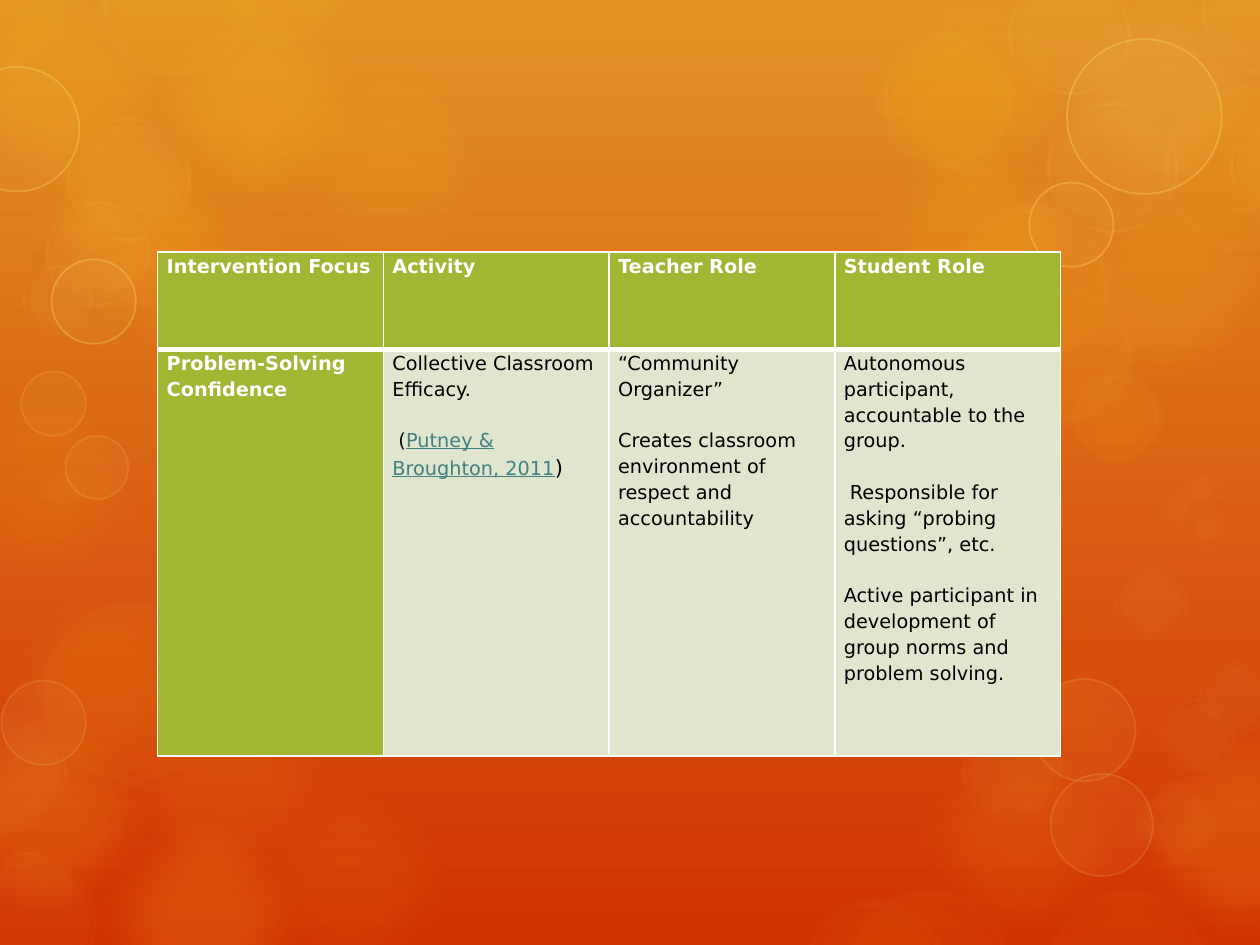
import pptx
import pptx.dml.color
import pptx.enum.shapes
import pptx.oxml.ns
import pptx.util
from dataclasses import dataclass
from lxml import etree
from pptx.util import Cm, Pt


@dataclass(frozen=True)
class Theme:
    font: str = "DejaVu Sans"
    body_size: float = 11
    bracket_size: float = 12
    paragraph_gap: float = 14.8
    line_spacing: float = 1.15
    sky_top: str = "E39325"
    sky_bottom: str = "D13202"
    gold: str = "FDC61B"
    pale_gold: str = "FFE281"
    cream: str = "FEEBAE"
    green: str = "A1B633"
    pale_green: str = "E0E5CE"
    white: str = "FFFFFF"
    black: str = "000000"
    citation: str = "408080"


theme = Theme()
rgb = pptx.dml.color.RGBColor.from_string
qn = pptx.oxml.ns.qn


def paint(fill, color, opacity):
    fill.solid()
    fill.fore_color.rgb = rgb(color)
    srgb = fill._xPr.find(".//" + qn("a:srgbClr"))
    etree.SubElement(srgb, qn("a:alpha"), val=str(opacity * 1000))


deck = pptx.Presentation()
deck.slide_width, deck.slide_height = Cm(25.4), Cm(19.05)
slide = deck.slides.add_slide(deck.slide_layouts[6])

sky = slide.background.fill
sky.gradient()
sky.gradient_angle = 270
for stop, color, position in zip(sky.gradient_stops, (theme.sky_top, theme.sky_bottom), (0, 1)):
    stop.color.rgb = rgb(color)
    stop.position = position

# Bokeh groups: fill, fill opacity, outline (color, points, opacity), soft edge in points,
# then circles as left, top, diameter in cm
bokeh_groups = [
    (theme.gold, 5, None, 25, [(18.52, 12.12, 5.3)]),
    (theme.gold, 8, None, 25, [
        (-0.65, 11.23, 5.3), (1.96, 13.31, 5.3), (4.39, 15.14, 5.3), (-1.77, 7.16, 5.3)]),
    (theme.gold, 10, None, 25, [
        (1.45, 3.05, 5.3), (5.21, 0.79, 5.3), (16.99, -0.75, 5.3), (17.93, 14.27, 5.3),
        (17.15, 6.65, 3.38)]),
    (theme.pale_gold, 10, None, 25, [(20.83, -0.82, 5.3)]),
    (theme.gold, 14, None, 25, [(-1.42, -0.82, 5.3)]),
    (theme.gold, 15, None, 25, [(0, 1.83, 5.3), (20.83, 3.05, 5.3), (16.99, 2.18, 5.3)]),
    (theme.gold, 16, None, 25, [(1.45, 15.93, 5.3), (22.38, 14.27, 5.3), (-1.74, 13.74, 5.3)]),
    (theme.gold, 20, None, 25, [(2.57, -0.46, 5.3)]),
    (theme.gold, 10, (theme.cream, 14, 6), 10, [
        (23.32, 1.65, 3.48), (17.63, 0.58, 2.9), (19.1, 4.04, 3.38), (20.04, 5.69, 2.9),
        (21.51, 7.39, 2.01), (1.91, -1.65, 3.3), (4.17, -1.9, 2.9), (-1.45, -1.47, 2.9)]),
    (theme.gold, 6, (theme.cream, 14, 4), 10, [
        (0.76, 12.01, 3.89), (16.05, 18.03, 3.15), (17.02, 17.81, 3.45), (21.03, 17.81, 3.4)]),
    (theme.pale_gold, 5, (theme.pale_gold, 1, 15), 0, [
        (0.03, 13.72, 1.7), (21.18, 15.6, 2.06), (20.83, 13.69, 2.06), (0.43, 7.49, 1.3),
        (1.32, 8.79, 1.27)]),
    (theme.pale_gold, 5, (theme.pale_gold, 5, 15), 5, [
        (-0.89, 17.15, 2.84), (-1.12, 14.33, 2.49), (19.38, 14.55, 2.06), (22.86, 15.75, 1.68),
        (22.43, 11.38, 1.55), (23.37, 14.05, 1.55), (24.13, 13.31, 1.55), (23.8, 9.4, 0.84),
        (23.32, 9.83, 0.84), (23.9, 10.24, 0.84), (0.76, 9.4, 0.99)]),
    (theme.pale_gold, 5, (theme.pale_gold, 1, 30), 0, [
        (-0.91, 1.35, 2.51), (1.04, 5.23, 1.7), (21.51, 0.79, 3.12), (20.75, 3.68, 1.7)]),
    (theme.pale_gold, 5, (theme.pale_gold, 5, 30), 5, [
        (1.32, 2.34, 2.54), (0.89, 4.04, 2.16), (0.43, 5.33, 1.45), (20.29, -0.58, 2.51),
        (24.21, -1.02, 2.54), (24.77, 2.08, 2.51), (21.08, 2.03, 2.69)]),
]
for color, opacity, outline, softness, circles in bokeh_groups:
    for left, top, diameter in circles:
        bokeh = slide.shapes.add_shape(pptx.enum.shapes.MSO_SHAPE.OVAL, Cm(left), Cm(top),
                                       Cm(diameter), Cm(diameter))
        bokeh.shadow.inherit = False
        paint(bokeh.fill, color, opacity)
        if outline:
            outline_color, points, outline_opacity = outline
            bokeh.line.width = Pt(points)
            paint(bokeh.line.fill, outline_color, outline_opacity)
        else:
            bokeh.line.fill.background()
        if softness:
            effects = bokeh._element.spPr.find(qn("a:effectLst"))
            etree.SubElement(effects, qn("a:softEdge"), rad=str(Pt(softness)))

# Each cell is a list of paragraphs, each paragraph a list of runs
citation = "Putney & Broughton, 2011"
intervention_rows = [
    [[["Intervention Focus"]], [["Activity"]], [["Teacher Role"]], [["Student Role"]]],
    [
        [["Problem-Solving Confidence"]],
        [["Collective Classroom Efficacy."], [" (", citation, ")"]],
        [["“Community Organizer”"],
         ["Creates classroom environment of respect and accountability"]],
        [["Autonomous participant, accountable to the group."],
         [" Responsible for asking “probing questions”, etc."],
         ["Active participant in development of group norms and problem solving."]],
    ],
]
interventions = slide.shapes.add_table(2, 4, Cm(3.18), Cm(5.08), Cm(18.2), Cm(10.16)).table
interventions.horz_banding = False
for column in interventions.columns:
    column.width = Cm(4.55)
for row, height in zip(interventions.rows, (1.96, 8.2)):
    row.height = Cm(height)

for row_index, row in enumerate(intervention_rows):
    for column_index, paragraphs in enumerate(row):
        cell = interventions.cell(row_index, column_index)
        heading = row_index == 0 or column_index == 0
        cell.margin_left = cell.margin_right = Cm(0.18)
        cell.margin_top = cell.margin_bottom = 0
        cell.fill.solid()
        cell.fill.fore_color.rgb = rgb(theme.green if heading else theme.pale_green)

        borders = {"a:lnL": 1, "a:lnR": 1, "a:lnT": 1, "a:lnB": 1}
        borders["a:lnB" if row_index == 0 else "a:lnT"] = 3
        for place, (side, points) in enumerate(borders.items()):
            border = etree.Element(qn(side), w=str(Pt(points)))
            border_fill = etree.SubElement(border, qn("a:solidFill"))
            etree.SubElement(border_fill, qn("a:srgbClr"), val=theme.white)
            cell._tc.tcPr.insert(place, border)

        for index, pieces in enumerate(paragraphs):
            frame = cell.text_frame
            paragraph = frame.add_paragraph() if index else frame.paragraphs[0]
            paragraph.line_spacing = theme.line_spacing
            if index:
                paragraph.space_before = Pt(theme.paragraph_gap)
            for piece in pieces:
                run = paragraph.add_run()
                run.text = piece
                run.font.name = theme.font
                run.font.size = Pt(theme.bracket_size if piece == ")" else theme.body_size)
                run.font.bold = heading
                run.font.color.rgb = rgb(theme.white if heading else theme.black)
                if piece == citation:
                    run.font.underline = True
                    run.font.color.rgb = rgb(theme.citation)

deck.save("out.pptx")
